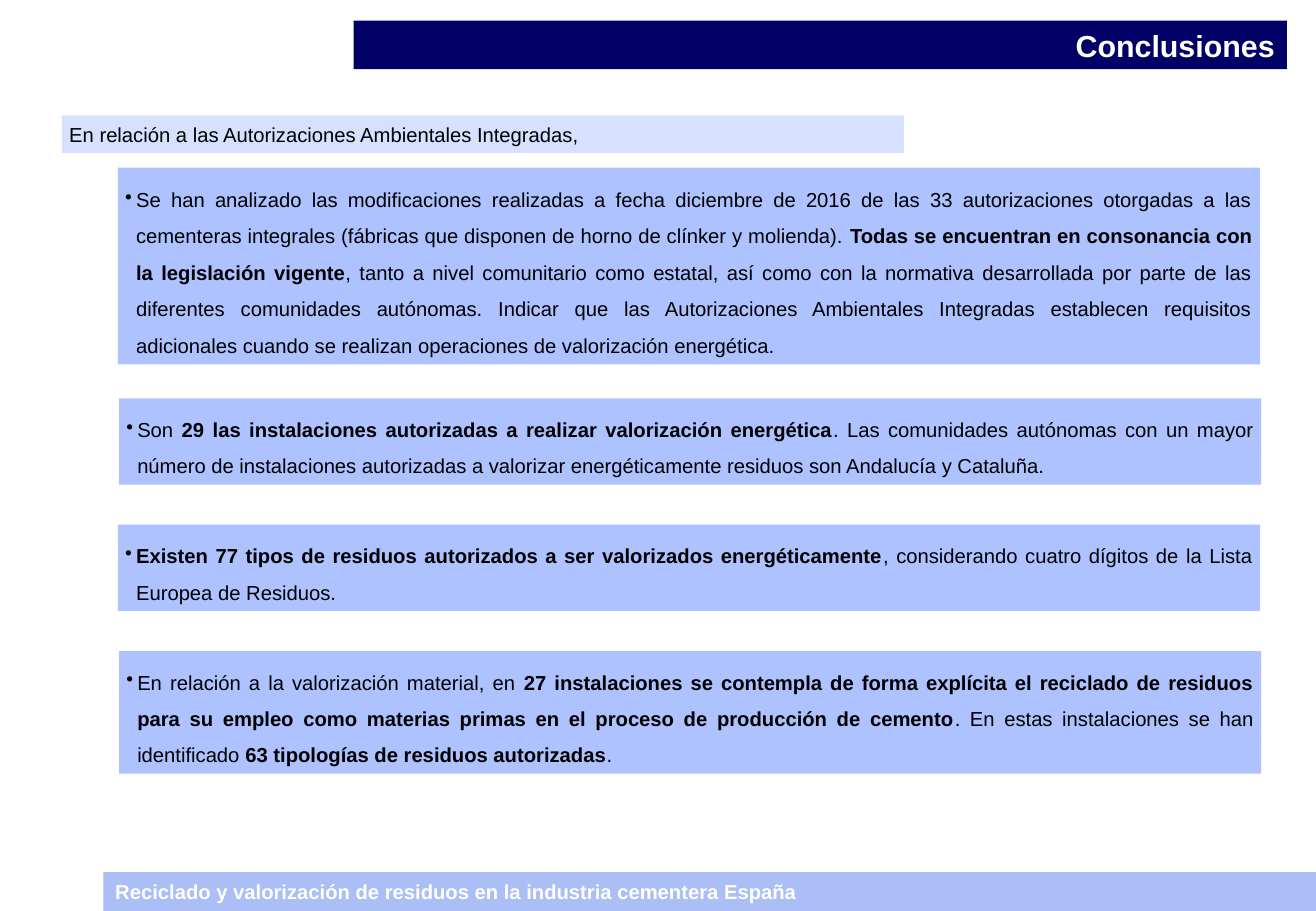
import pptx
import pptx.util
import pptx.dml.color
import pptx.enum.shapes
import pptx.enum.text
import pptx.oxml.ns
import lxml.etree

Inches = pptx.util.Inches
Align = pptx.enum.text.PP_ALIGN

THEME = {
    "font": "Arial",
    "title_size": 18,
    "body_size": 12,
    "navy": "000066",
    "footer": "ABBEF5",
    "intro": "D6E0FF",
    "panel": "ADC2FF",
    "light": "FFFFFF",
    "dark": "000000",
}

deck = pptx.Presentation()
deck.slide_width = Inches(10.83)
deck.slide_height = Inches(7.5)
page = deck.slides.add_slide(deck.slide_layouts[6])


def add_band(text, *, at, fill, color="dark", size="body_size", bold=False,
             align=Align.JUSTIFY, inset=0.06, bullet=False):
    box = page.shapes.add_shape(
        pptx.enum.shapes.MSO_SHAPE.RECTANGLE, *[Inches(length) for length in at])
    box.shadow.inherit = False
    box.fill.solid()
    box.fill.fore_color.rgb = pptx.dml.color.RGBColor.from_string(THEME[fill])
    box.line.fill.background()
    frame = box.text_frame
    frame.word_wrap = True
    frame.vertical_anchor = pptx.enum.text.MSO_ANCHOR.MIDDLE
    frame.margin_left = frame.margin_right = Inches(inset)
    frame.margin_top = frame.margin_bottom = Inches(0.05)
    para = frame.paragraphs[0]
    para.alignment = align
    if bullet:
        para.line_spacing = 1.5
        properties = para._p.get_or_add_pPr()
        properties.set("marL", str(Inches(0.09)))
        properties.set("indent", str(-Inches(0.09)))
        mark = lxml.etree.SubElement(properties, pptx.oxml.ns.qn("a:buChar"))
        mark.set("char", "•")
    for index, part in enumerate(text.split("**")):
        if not part:
            continue
        span = para.add_run()
        span.text = part
        span.font.name = THEME["font"]
        span.font.size = pptx.util.Pt(THEME[size])
        span.font.bold = bold or index % 2 == 1
        span.font.color.rgb = pptx.dml.color.RGBColor.from_string(THEME[color])


add_band("Reciclado y valorización de residuos en la industria cementera España",
         at=(0.85, 7.18, 9.98, 0.32), fill="footer", color="light", bold=True,
         align=Align.LEFT, inset=0.1)
add_band("Conclusiones", at=(2.91, 0.17, 7.68, 0.4), fill="navy", color="light",
         size="title_size", bold=True, align=Align.RIGHT, inset=0.1)
add_band("En relación a las Autorizaciones Ambientales Integradas,",
         at=(0.51, 0.95, 6.93, 0.31), fill="intro")

conclusions = [
    (0.97, 1.38, 1.62,
     "Se han analizado las modificaciones realizadas a fecha diciembre de 2016 de las "
     "33 autorizaciones otorgadas a las cementeras integrales (fábricas que disponen de "
     "horno de clínker y molienda). **Todas se encuentran en consonancia con la "
     "legislación vigente**, tanto a nivel comunitario como estatal, así como con la "
     "normativa desarrollada por parte de las diferentes comunidades autónomas. Indicar "
     "que las Autorizaciones Ambientales Integradas establecen requisitos adicionales "
     "cuando se realizan operaciones de valorización energética."),
    (0.98, 3.28, 0.71,
     "Son **29 las instalaciones autorizadas a realizar valorización energética**. Las "
     "comunidades autónomas con un mayor número de instalaciones autorizadas a valorizar "
     "energéticamente residuos son Andalucía y Cataluña."),
    (0.97, 4.32, 0.71,
     "**Existen 77 tipos de residuos autorizados a ser valorizados energéticamente**, "
     "considerando cuatro dígitos de la Lista Europea de Residuos."),
    (0.98, 5.36, 1.01,
     "En relación a la valorización material, en **27 instalaciones se contempla de forma "
     "explícita el reciclado de residuos para su empleo como materias primas en el proceso "
     "de producción de cemento**. En estas instalaciones se han identificado **63 "
     "tipologías de residuos autorizadas**."),
]
for left, top, height, text in conclusions:
    add_band(text, at=(left, top, 9.4, height), fill="panel", bullet=True)

deck.save("out.pptx")
